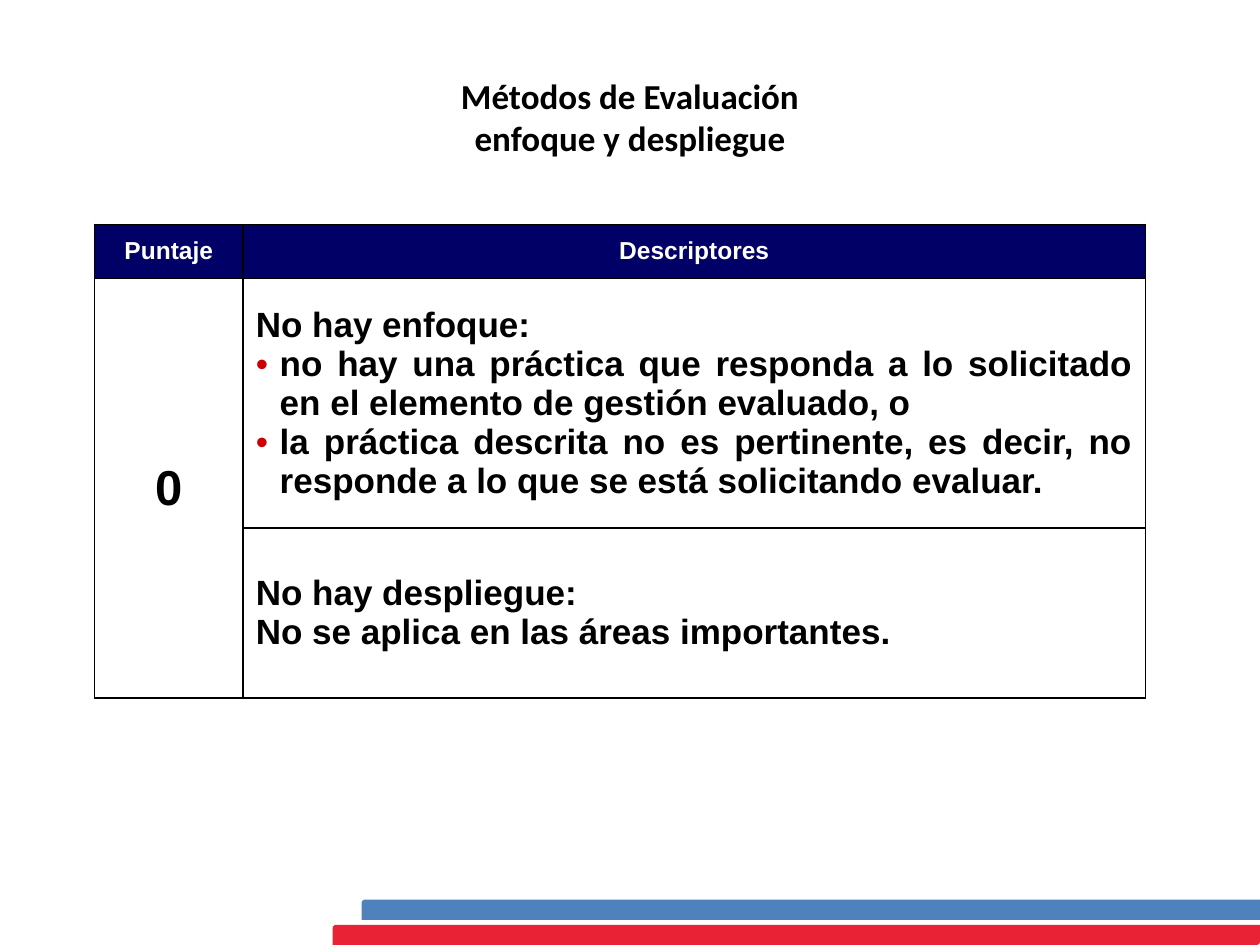
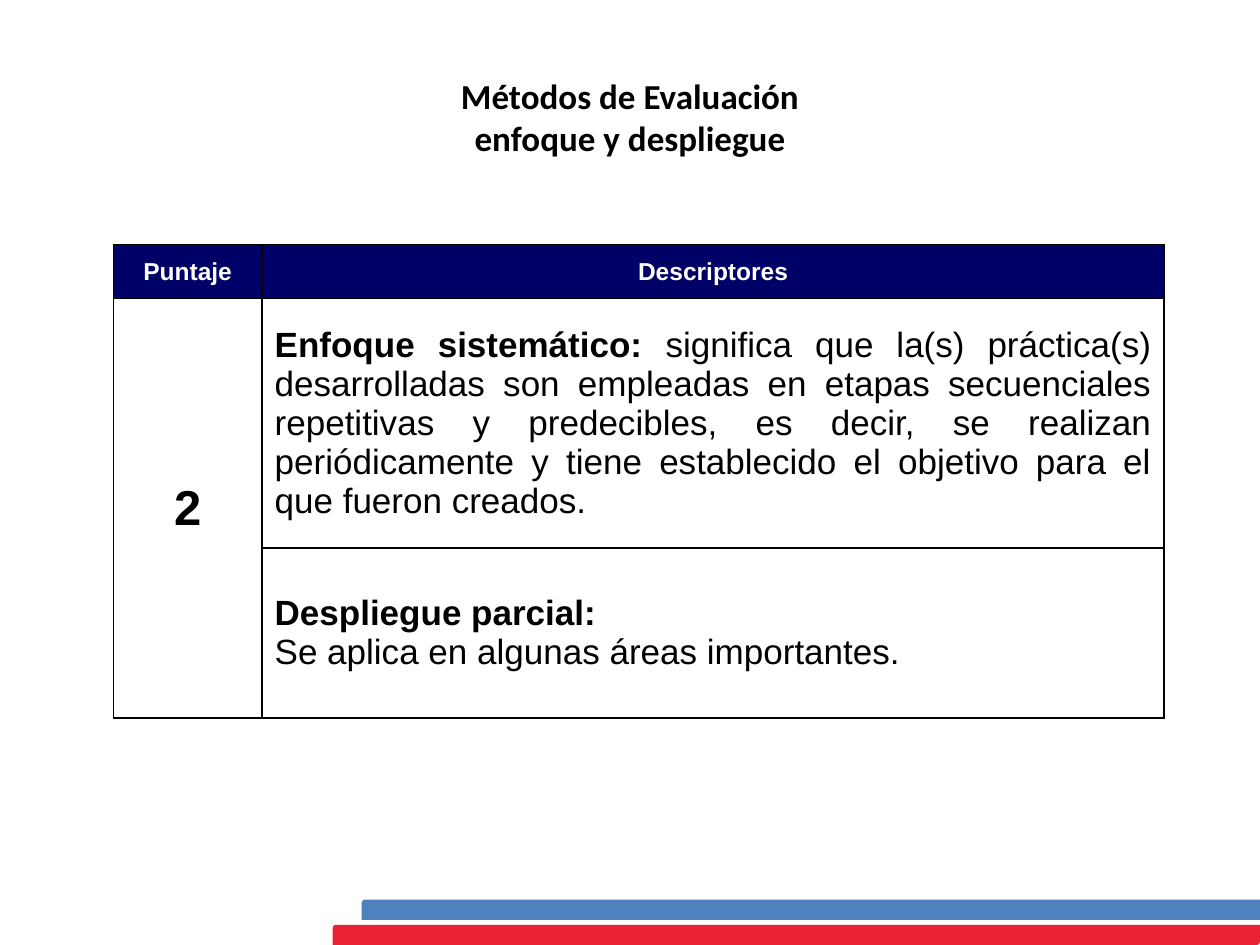
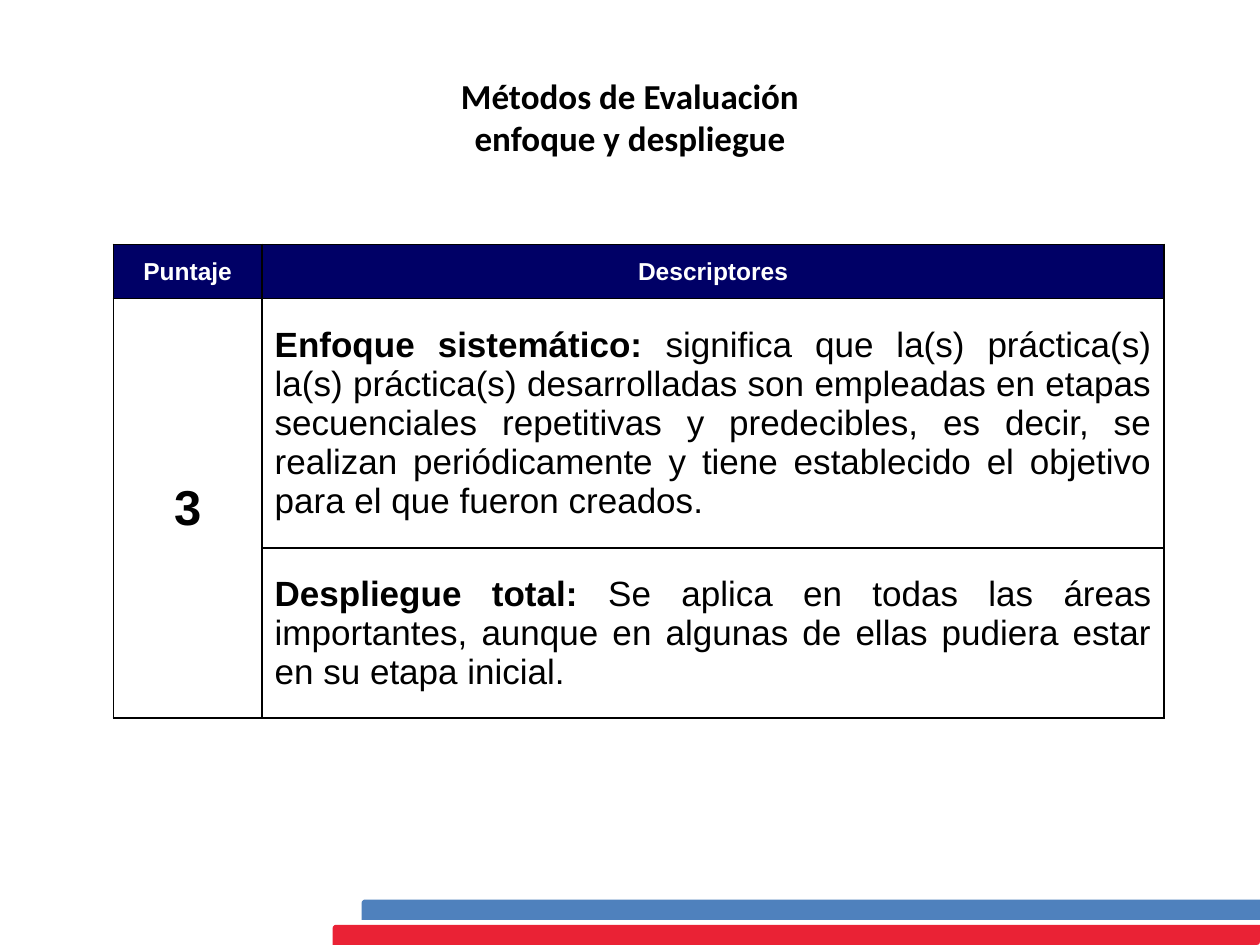
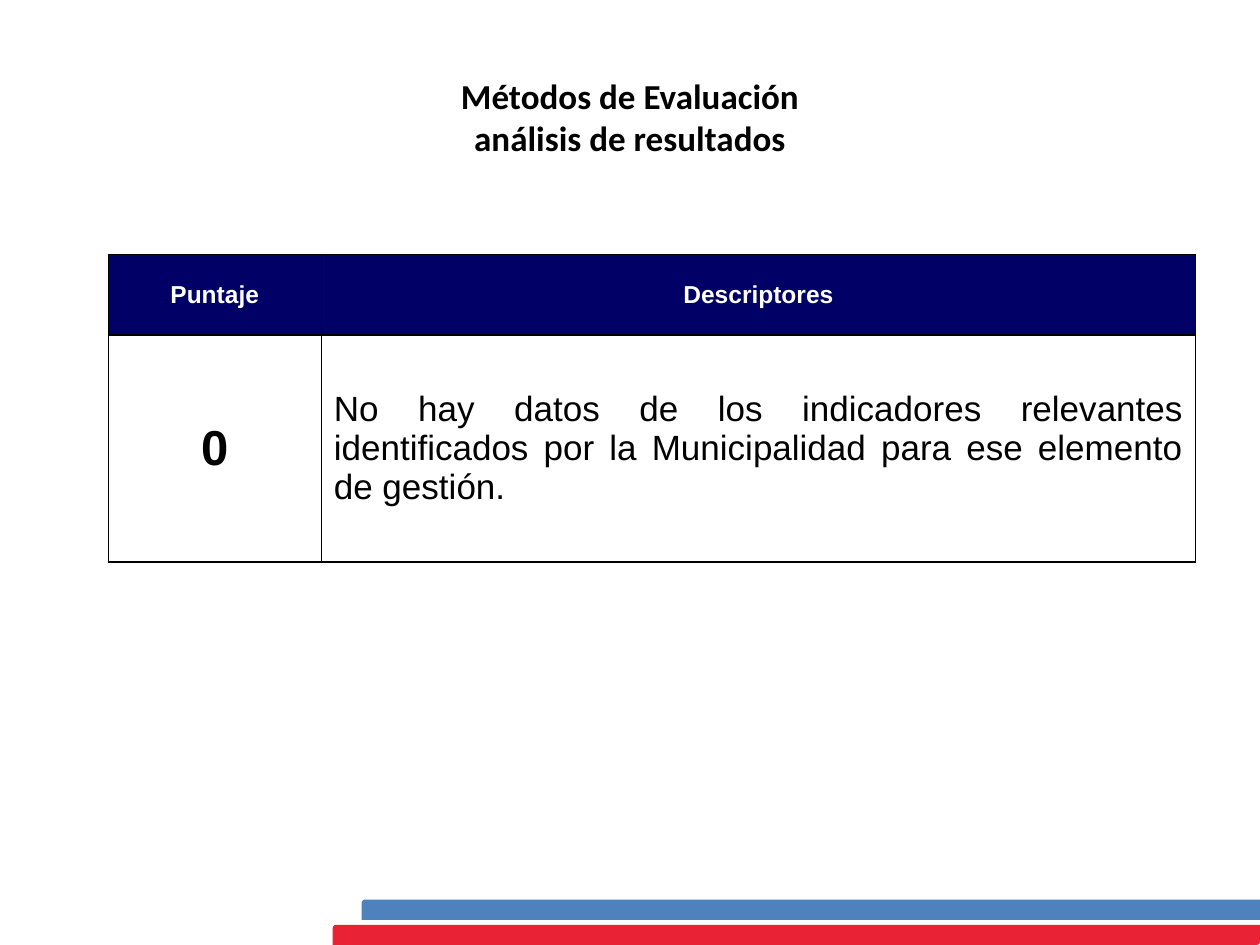
import pptx
import pptx.dml.color
import pptx.enum.shapes
import pptx.enum.text
import pptx.oxml
import pptx.oxml.ns
import pptx.util
from pptx.util import Inches

COLORS = {
    "navy": "000066",
    "blue": "4F81BD",
    "red": "EA2235",
    "bullet": "CC0000",
    "black": "000000",
    "white": "FFFFFF",
}
ALIGN = pptx.enum.text.PP_ALIGN
MIDDLE = pptx.enum.text.MSO_ANCHOR.MIDDLE
NAMESPACE = pptx.oxml.ns.nsdecls("a")

BANDS = [(2.87, 7.14, "blue"), (2.64, 7.34, "red")]
HEADERS = ["Puntaje", "Descriptores"]
APPROACH_TITLE = "Métodos de Evaluación\venfoque y despliegue"
RESULTS_TITLE = "Métodos de Evaluación\vanálisis de resultados"
APPROACH_GRID = ([1.18, 7.16], [0.43, 1.98, 1.35])
RESULTS_GRID = ([1.69, 6.94], [0.64, 1.8])
STAGES = (
    "desarrolladas son empleadas en etapas secuenciales repetitivas y predecibles, "
    "es decir, se realizan periódicamente y tiene establecido el objetivo para el que "
    "fueron creados."
)

# Each descriptor is a list of paragraphs; each paragraph is (bold text, plain text).
# A bold text that starts with "•" becomes a bulleted paragraph.
SLIDES = [
    (APPROACH_TITLE, (0.75, 1.78), APPROACH_GRID, "0", [
        [
            ("No hay enfoque:", ""),
            ("•no hay una práctica que responda a lo solicitado en el elemento "
             "de gestión evaluado, o", ""),
            ("•la práctica descrita no es pertinente, es decir, no responde a lo "
             "que se está solicitando evaluar.", ""),
        ],
        [("No hay despliegue:", ""), ("No se aplica en las áreas importantes.", "")],
    ]),
    (APPROACH_TITLE, (0.9, 1.94), APPROACH_GRID, "2", [
        [("Enfoque sistemático: ", "significa que la(s) práctica(s) " + STAGES)],
        [("Despliegue parcial:", ""), ("", "Se aplica en algunas áreas importantes.")],
    ]),
    (APPROACH_TITLE, (0.9, 1.94), APPROACH_GRID, "3", [
        [("Enfoque sistemático: ",
          "significa que la(s) práctica(s) la(s) práctica(s) " + STAGES)],
        [("Despliegue total: ",
          "Se aplica en todas las áreas importantes, aunque en algunas de ellas "
          "pudiera estar en su etapa inicial.")],
    ]),
    (RESULTS_TITLE, (0.86, 2.02), RESULTS_GRID, "0", [
        [("", "No hay datos de los indicadores relevantes identificados por la "
              "Municipalidad para ese elemento de gestión.")],
    ]),
]


def style_paragraph(paragraph, size, color="black", name="Arial", alignment=ALIGN.CENTER, bold=True):
    paragraph.alignment = alignment
    font = paragraph.font
    font.name = name
    font.size = pptx.util.Pt(size)
    font.bold = bold
    font.color.rgb = pptx.dml.color.RGBColor.from_string(COLORS[color])


def add_bullet(paragraph):
    properties = paragraph._p.get_or_add_pPr()
    properties.set("marL", str(Inches(0.19)))
    properties.set("indent", str(-Inches(0.19)))
    for xml in (
        f'<a:buClr {NAMESPACE}><a:srgbClr val="{COLORS["bullet"]}"/></a:buClr>',
        f'<a:buFont {NAMESPACE} typeface="Arial"/>',
        f'<a:buChar {NAMESPACE} char="•"/>',
    ):
        properties.append(pptx.oxml.parse_xml(xml))


presentation = pptx.Presentation()
presentation.slide_width = Inches(10)
presentation.slide_height = Inches(7.5)

for title, (left, top), (widths, heights), score, descriptors in SLIDES:
    slide = presentation.slides.add_slide(presentation.slide_layouts[6])

    for band_left, band_top, color in BANDS:
        band = slide.shapes.add_shape(
            pptx.enum.shapes.MSO_SHAPE.ROUND_2_DIAG_RECTANGLE,
            Inches(band_left), Inches(band_top), Inches(7.36), Inches(0.16))
        band.shadow.inherit = False
        band.fill.solid()
        band.fill.fore_color.rgb = pptx.dml.color.RGBColor.from_string(COLORS[color])
        band.line.fill.background()

    title_box = slide.shapes.add_textbox(Inches(0.5), Inches(0.3), Inches(9), Inches(1.25))
    title_box.text_frame.word_wrap = True
    title_box.text_frame.vertical_anchor = MIDDLE
    title_box.text_frame.text = title
    style_paragraph(title_box.text_frame.paragraphs[0], 20, name="Calibri")

    table = slide.shapes.add_table(
        len(heights), len(widths), Inches(left), Inches(top),
        Inches(sum(widths)), Inches(sum(heights))).table
    for column, width in zip(table.columns, widths):
        column.width = Inches(width)
    for row, height in zip(table.rows, heights):
        row.height = Inches(height)

    for cell in table.iter_cells():
        cell.vertical_anchor = MIDDLE
        for side in "LRTB":
            cell._tc.get_or_add_tcPr().append(pptx.oxml.parse_xml(
                f'<a:ln{side} {NAMESPACE} w="12700"><a:solidFill>'
                f'<a:srgbClr val="{COLORS["black"]}"/></a:solidFill></a:ln{side}>'))
        cell.fill.background()

    for index, header in enumerate(HEADERS):
        cell = table.cell(0, index)
        cell.fill.solid()
        cell.fill.fore_color.rgb = pptx.dml.color.RGBColor.from_string(COLORS["navy"])
        cell.text = header
        style_paragraph(cell.text_frame.paragraphs[0], 14, "white")

    score_cell = table.cell(1, 0)
    if len(descriptors) > 1:
        score_cell.merge(table.cell(len(descriptors), 0))
    score_cell.text = score
    style_paragraph(score_cell.text_frame.paragraphs[0], 28)

    for row_index, descriptor in enumerate(descriptors, start=1):
        text_frame = table.cell(row_index, 1).text_frame
        for index, (bold_text, plain_text) in enumerate(descriptor):
            paragraph = text_frame.add_paragraph() if index else text_frame.paragraphs[0]
            if bold_text.startswith("•"):
                add_bullet(paragraph)
            style_paragraph(paragraph, 20, alignment=ALIGN.JUSTIFY, bold=bool(bold_text))
            if bold_text:
                paragraph.add_run().text = bold_text.lstrip("•")
            if plain_text:
                run = paragraph.add_run()
                run.text = plain_text
                run.font.bold = False

presentation.save("out.pptx")
